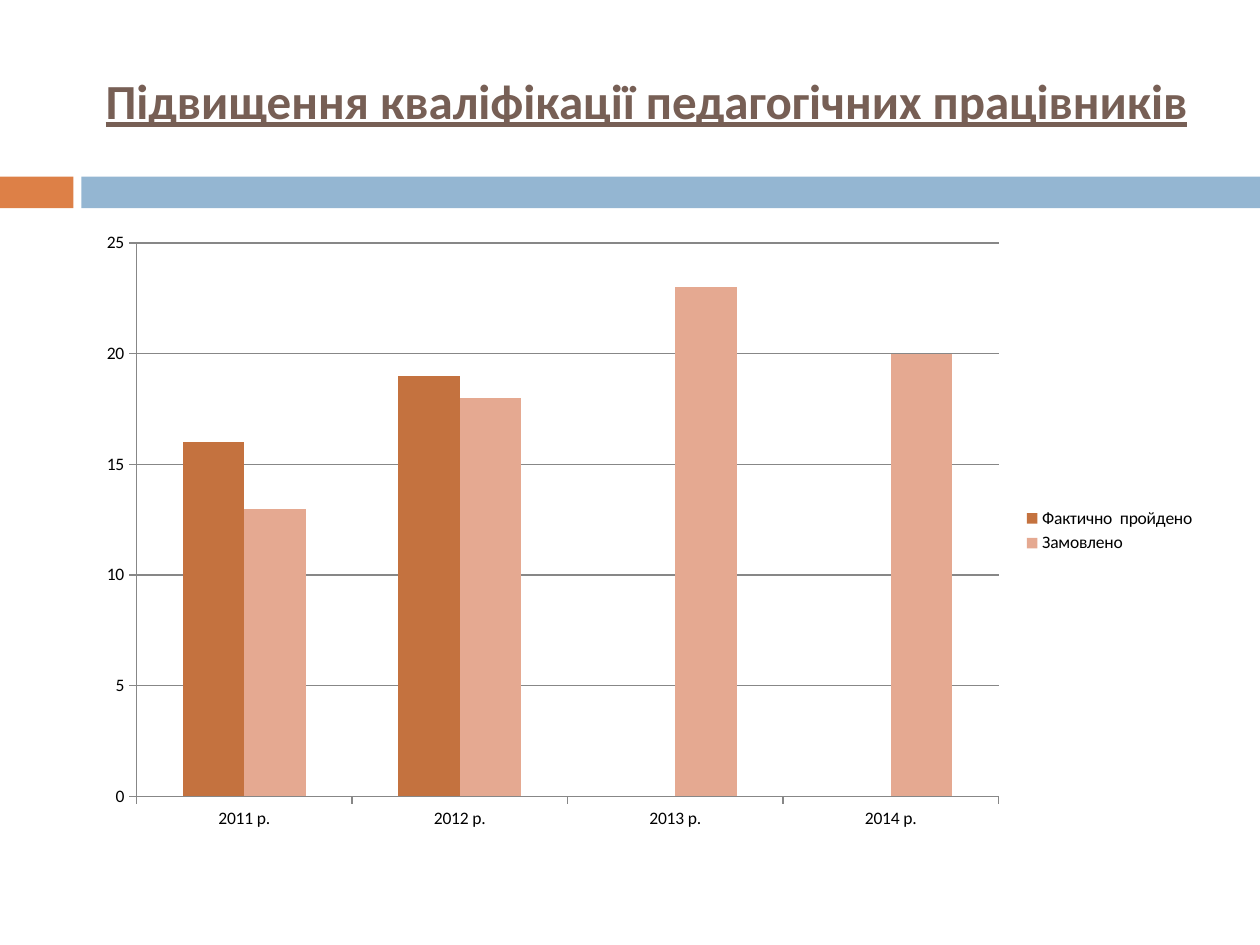
from pptx import Presentation
from pptx.chart.data import CategoryChartData
from pptx.dml.color import RGBColor
from pptx.enum.chart import XL_CHART_TYPE, XL_LEGEND_POSITION, XL_TICK_MARK
from pptx.enum.shapes import MSO_SHAPE
from pptx.enum.text import MSO_ANCHOR, PP_ALIGN
from pptx.util import Cm, Pt

FONT = "Calibri"
YEARS = ["2011 р.", "2012 р.", "2013 р.", "2014 р."]
SERIES = [
    ("Фактично  пройдено", [16, 19, None, None], "C4723F"),
    ("Замовлено", [13, 18, 23, 20], "E5A991"),
]


def color(value):
    return RGBColor.from_string(value)


def add_band(slide, left, top, width, height):
    """Orange tab and blue bar, parted by a narrow gap."""
    tab, gap = Cm(1.48), Cm(0.16)
    bar_start = tab + gap
    for offset, length, fill in [(0, tab, "DD8047"),
                                 (bar_start, width - bar_start, "94B6D2")]:
        strip = slide.shapes.add_shape(
            MSO_SHAPE.RECTANGLE, left + offset, top, length, height)
        strip.shadow.inherit = False
        strip.fill.solid()
        strip.fill.fore_color.rgb = color(fill)
        strip.line.fill.background()


def add_heading(slide, left, top, width, height):
    heading = slide.shapes.add_textbox(left, top, width, height).text_frame
    heading.word_wrap = True
    heading.vertical_anchor = MSO_ANCHOR.MIDDLE
    heading.text = "Підвищення кваліфікації педагогічних працівників"
    line = heading.paragraphs[0]
    line.alignment = PP_ALIGN.CENTER
    font = line.runs[0].font
    font.name, font.size = FONT, Pt(28)
    font.bold = font.underline = True
    font.color.rgb = color("775F55")


def add_training_chart(slide, left, top, width, height):
    training = CategoryChartData()
    training.categories = YEARS
    for name, counts, _ in SERIES:
        training.add_series(name, counts)
    chart = slide.shapes.add_chart(
        XL_CHART_TYPE.COLUMN_CLUSTERED, left, top, width, height, training).chart
    chart.has_title = False
    chart.font.name, chart.font.size = FONT, Pt(10)
    chart.font.color.rgb = color("000000")

    # Columns
    plot = chart.plots[0]
    plot.gap_width, plot.overlap = 150, 0
    plot.vary_by_categories = False
    for columns, (_, _, fill) in zip(plot.series, SERIES):
        columns.format.fill.solid()
        columns.format.fill.fore_color.rgb = color(fill)

    # Axes and gridlines
    counts_axis = chart.value_axis
    counts_axis.minimum_scale, counts_axis.maximum_scale = 0, 25
    counts_axis.major_unit = 5
    counts_axis.has_major_gridlines = True
    for axis in (chart.category_axis, counts_axis):
        axis.major_tick_mark = XL_TICK_MARK.OUTSIDE
    for ruled in (chart.category_axis, counts_axis, counts_axis.major_gridlines):
        ruled.format.line.color.rgb = color("878787")
        ruled.format.line.width = Pt(0.75)

    # Legend
    chart.has_legend = True
    chart.legend.position = XL_LEGEND_POSITION.RIGHT
    chart.legend.include_in_layout = False


def main():
    deck = Presentation()
    deck.slide_width, deck.slide_height = Cm(25.4), Cm(19.05)
    slide = deck.slides.add_slide(deck.slide_layouts[6])
    add_band(slide, 0, Cm(3.56), deck.slide_width, Cm(0.64))
    add_heading(slide, Cm(1.7), Cm(0.64), Cm(22.66), Cm(2.74))
    add_training_chart(slide, Cm(1.7), Cm(4.45), Cm(22.66), Cm(12.5))
    deck.save("out.pptx")


if __name__ == "__main__":
    main()
